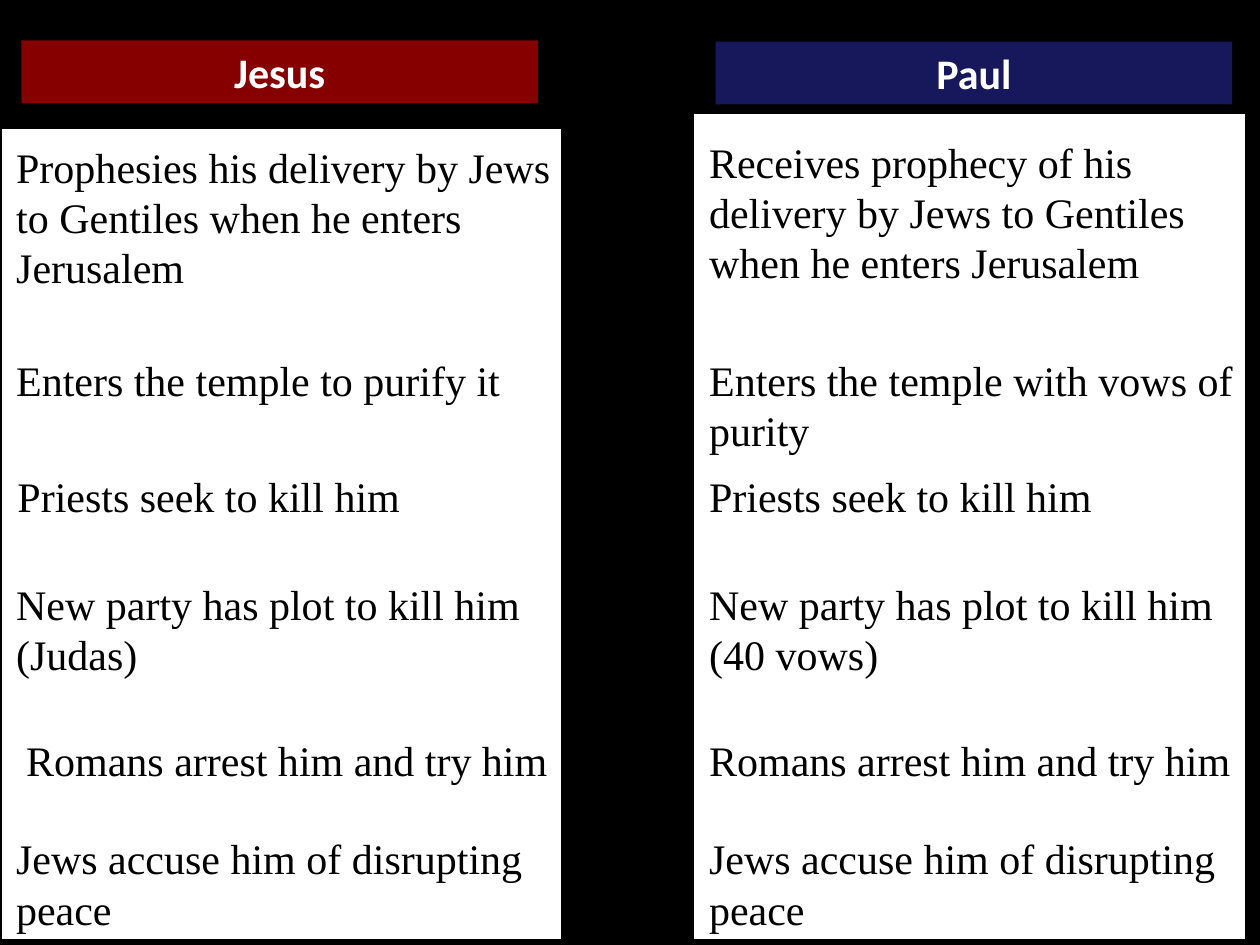
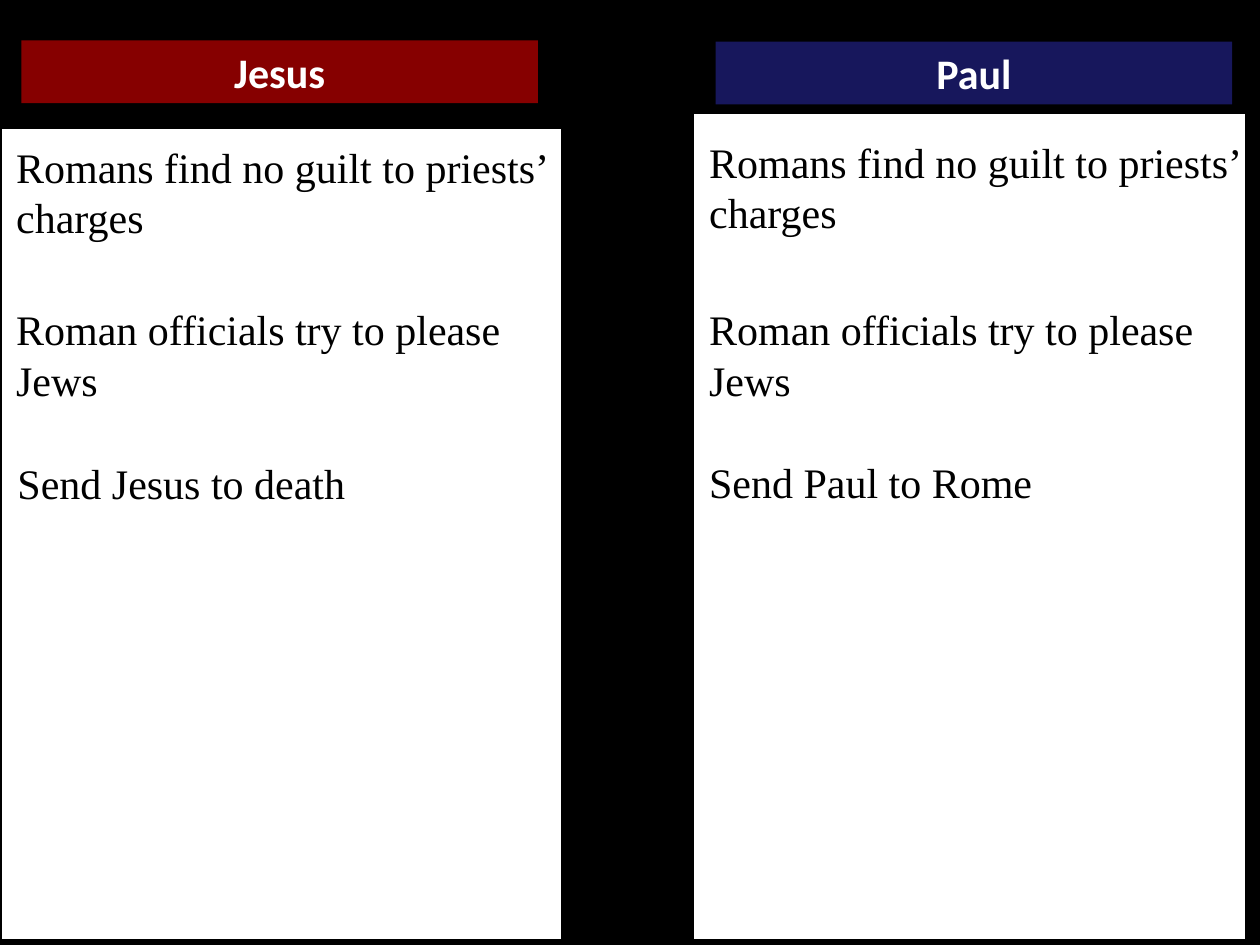
from dataclasses import dataclass

from pptx import Presentation
from pptx.dml.color import RGBColor as RGB
from pptx.enum.shapes import MSO_SHAPE as SHAPE
from pptx.enum.text import MSO_ANCHOR as ANCHOR, PP_ALIGN as ALIGN
from pptx.shapes.autoshape import Shape
from pptx.slide import Slide
from pptx.util import Inches, Pt


@dataclass(frozen=True)
class Theme:
    black: RGB = RGB(0x00, 0x00, 0x00)
    white: RGB = RGB(0xFF, 0xFF, 0xFF)
    red: RGB = RGB(0x86, 0x00, 0x00)
    navy: RGB = RGB(0x17, 0x17, 0x5C)
    heading_font: str = "Calibri"
    body_font: str = "Times New Roman"
    size: float = 24
    outline: float = 0.75


@dataclass(frozen=True)
class Box:
    """Left, top, width and height in inches."""
    left: float
    top: float
    width: float
    height: float

    def emu(self) -> tuple[Inches, ...]:
        return tuple(Inches(v) for v in (self.left, self.top, self.width, self.height))


@dataclass(frozen=True)
class Column:
    name: str
    color: RGB
    header: Box
    panel: Box
    note_left: float
    note_width: float


@dataclass(frozen=True)
class Note:
    """One entry of a column; its text rests on the bottom of its row."""
    text: str
    top: float
    height: float
    indent: float = 0
    extra_width: float = 0


THEME = Theme()

JESUS = Column("Jesus", THEME.red, Box(0.17, 0.32, 4.1, 0.5),
               Box(0.01, 1.02, 4.45, 6.44), 0.03, 4.43)
PAUL = Column("Paul", THEME.navy, Box(5.68, 0.33, 4.1, 0.5),
              Box(5.5, 0.9, 4.39, 6.56), 5.53, 4.37)

SLIDES: list[list[tuple[Column, list[Note]]]] = [
    [
        (JESUS, [
            Note("Prophesies his delivery by Jews to Gentiles when he enters Jerusalem",
                 1.06, 1.31, extra_width=0.02),
            Note("Enters the temple to purify it", 2.35, 0.91),
            Note("Priests seek to kill him", 3.27, 0.91, indent=0.01),
            Note("New party has plot to kill him (Judas)", 4.13, 1.31),
            Note("Romans arrest him and try him", 5.44, 0.84, indent=0.08),
            Note("Jews accuse him of disrupting peace", 6.28, 1.18),
        ]),
        (PAUL, [
            Note("Receives prophecy of his delivery by Jews to Gentiles when he enters Jerusalem",
                 1.02, 1.31),
            Note("Enters the temple with vows of purity", 2.35, 1.31),
            Note("Priests seek to kill him", 3.68, 0.5),
            Note("New party has plot to kill him\n(40 vows)", 4.19, 1.25),
            Note("Romans arrest him and try him", 5.44, 0.84),
            Note("Jews accuse him of disrupting peace", 6.28, 1.18),
        ]),
    ],
    [
        (JESUS, [
            Note("Romans find no guilt to priests’ charges", 1.06, 0.91, extra_width=0.02),
            Note("Roman officials try to please Jews", 2.35, 0.91),
            Note("Send Jesus to death", 3.27, 0.81, indent=0.01),
        ]),
        (PAUL, [
            Note("Romans find no guilt to priests’ charges", 1.02, 0.91, extra_width=0.08),
            Note("Roman officials try to please Jews", 2.35, 0.91),
            Note("Send Paul to Rome", 3.57, 0.5),
        ]),
    ],
]


def write_text(sp: Shape, text: str, *, font: str, color: RGB, bold: bool = False,
               align: ALIGN = ALIGN.LEFT, anchor: ANCHOR = ANCHOR.TOP) -> None:
    tf = sp.text_frame
    tf.word_wrap = True
    tf.vertical_anchor = anchor
    tf.text = text
    for p in tf.paragraphs:
        p.alignment = align
        for r in p.runs:
            r.font.name = font
            r.font.size = Pt(THEME.size)
            r.font.bold = bold
            r.font.color.rgb = color


def add_rect(s: Slide, box: Box, fill: RGB, line: RGB | None = None) -> Shape:
    sp = s.shapes.add_shape(SHAPE.RECTANGLE, *box.emu())
    sp.shadow.inherit = False
    sp.fill.solid()
    sp.fill.fore_color.rgb = fill
    if line is None:
        sp.line.fill.background()
    else:
        sp.line.color.rgb = line
        sp.line.width = Pt(THEME.outline)
    return sp


def add_note(s: Slide, column: Column, note: Note) -> None:
    box = Box(column.note_left + note.indent, note.top,
              column.note_width - note.indent + note.extra_width, note.height)
    write_text(s.shapes.add_textbox(*box.emu()), note.text,
               font=THEME.body_font, color=THEME.black, anchor=ANCHOR.BOTTOM)


def add_column(s: Slide, column: Column, notes: list[Note]) -> None:
    write_text(add_rect(s, column.header, column.color), column.name,
               font=THEME.heading_font, color=THEME.white, bold=True,
               align=ALIGN.CENTER)
    add_rect(s, column.panel, THEME.white, THEME.black)
    for note in notes:
        add_note(s, column, note)


def main() -> None:
    prs = Presentation()
    prs.slide_width, prs.slide_height = Inches(10), Inches(7.5)
    background = prs.slide_master.background.fill
    background.solid()
    background.fore_color.rgb = THEME.black
    blank = prs.slide_layouts.get_by_name("Blank")
    for columns in SLIDES:
        s = prs.slides.add_slide(blank)
        for column, notes in columns:
            add_column(s, column, notes)
    prs.save("out.pptx")


if __name__ == "__main__":
    main()
